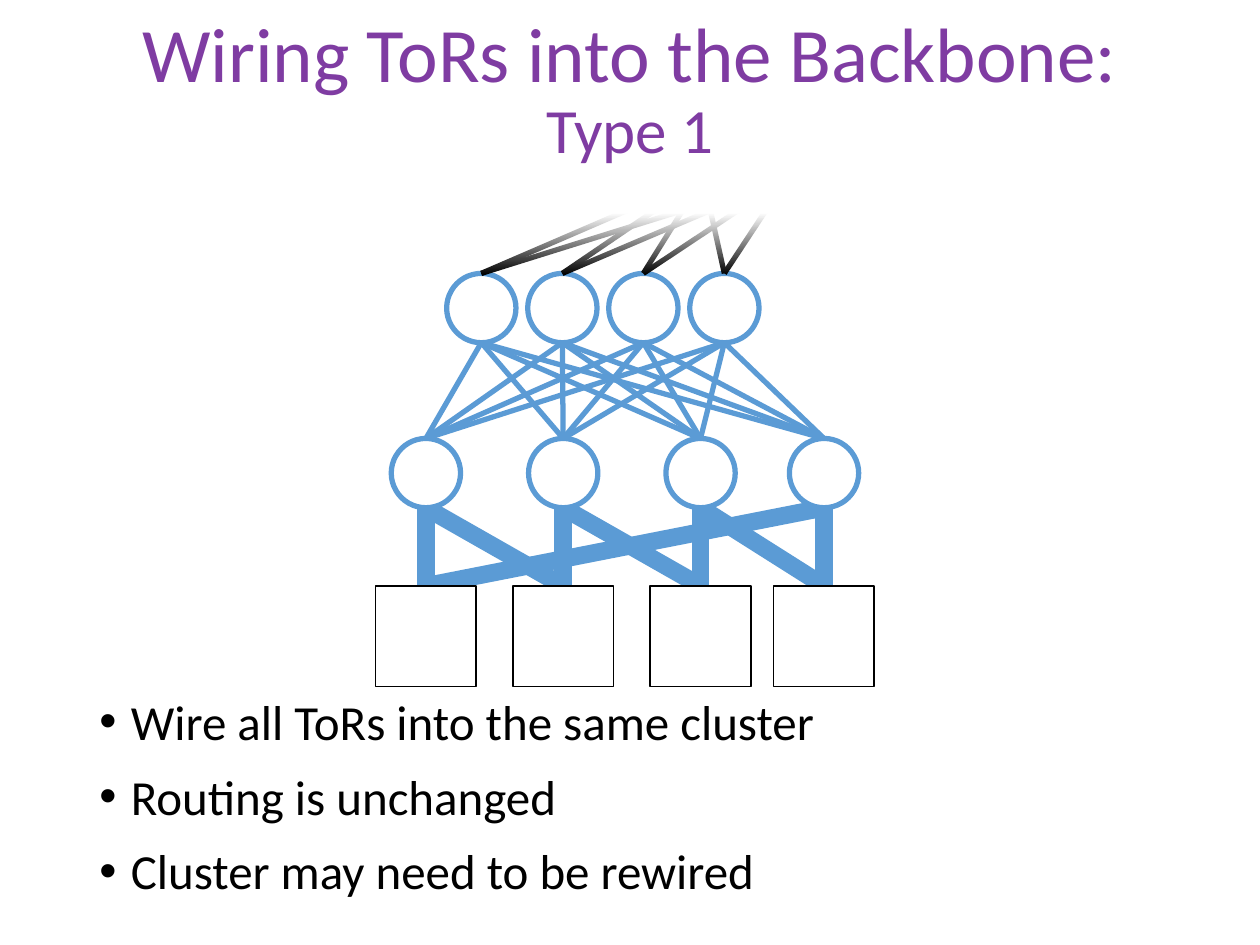
from pptx import Presentation
from pptx.dml.color import RGBColor
from pptx.enum.shapes import MSO_CONNECTOR, MSO_SHAPE
from pptx.enum.text import MSO_ANCHOR, PP_ALIGN
from pptx.oxml.ns import qn
from pptx.util import Inches, Pt
from lxml.etree import SubElement

BLUE, BLACK, WHITE, PURPLE = "5B9BD5", "000000", "FFFFFF", "7F3CA2"
TOR_X = [3.38, 4.47, 5.56, 6.54]
SPINE_X = [3.82 + 0.643 * i for i in range(4)]
CORE_X = [5.58, 6.25]
CORE_BOTTOM, SPINE_TOP, AGG_TOP, TOR_TOP = 1.41, 2.17, 3.48, 4.65
DIAMETER, TOR_SIZE = 0.55, 0.8
SPINE_BOTTOM, AGG_BOTTOM = SPINE_TOP + DIAMETER, AGG_TOP + DIAMETER

prs = Presentation()
prs.slide_width, prs.slide_height = Inches(10), Inches(7.5)
s = prs.slides.add_slide(prs.slide_layouts[5])
rgb = RGBColor.from_string


def add_link(x1, y1, x2, y2, color, width):
    link = s.shapes.add_connector(MSO_CONNECTOR.STRAIGHT, Inches(x1), Inches(y1), Inches(x2), Inches(y2))
    link.line.color.rgb = rgb(color)
    link.line.width = Pt(width)
    SubElement(link._element.spPr, qn("a:effectLst"))
    return link


def add_node(kind, center_x, top, size, color, width):
    node = s.shapes.add_shape(kind, Inches(center_x - size / 2), Inches(top), Inches(size), Inches(size))
    node.shadow.inherit = False
    node.fill.solid()
    node.fill.fore_color.rgb = rgb(WHITE)
    node.line.color.rgb = rgb(color)
    node.line.width = Pt(width)
    return node


# Links lie behind the nodes and are joined to them further down
agg_links, tor_links = [], []
for i, x in enumerate(TOR_X):
    for spine_x in SPINE_X:
        agg_links.append((i, add_link(x, AGG_TOP, spine_x, SPINE_BOTTOM, BLUE, 3)))
    for agg_x in (TOR_X[i], TOR_X[i - 1]):
        tor_links.append((i, add_link(x, TOR_TOP, agg_x, AGG_BOTTOM, BLUE, 10)))

tors = [add_node(MSO_SHAPE.RECTANGLE, x, TOR_TOP, TOR_SIZE, BLACK, 1) for x in TOR_X]
aggs = [add_node(MSO_SHAPE.OVAL, x, AGG_TOP, DIAMETER, BLUE, 3) for x in TOR_X]
spines = [add_node(MSO_SHAPE.OVAL, x, SPINE_TOP, DIAMETER, BLUE, 3) for x in SPINE_X]

for links, nodes in ((agg_links, aggs), (tor_links, tors)):
    for i, link in links:
        link.begin_connect(nodes[i], 0)

for spine, x in zip(spines, SPINE_X):
    for core_x in CORE_X:
        add_link(x, SPINE_TOP, core_x, CORE_BOTTOM, BLACK, 3).begin_connect(spine, 0)

# White fade over the upper links
fade = s.shapes.add_shape(MSO_SHAPE.RECTANGLE, Inches(0.24), Inches(0.44), Inches(8.83), Inches(1.73))
fade.shadow.inherit = False
fade.line.fill.background()
fade.fill.gradient()
fade.fill.gradient_angle = 90
for stop, position in zip(fade.fill.gradient_stops, (0, 0.28)):
    stop.color.rgb = rgb(WHITE)
    stop.position = position
first_color = next(fade._element.spPr.iter(qn("a:srgbClr")))
SubElement(first_color, qn("a:alpha"), val="0")

# Title, in front of the fade
title = s.shapes.title
title.left, title.top, title.width, title.height = Inches(0.69), Inches(0), Inches(8.62), Inches(1.45)
s.shapes._spTree.append(title._element)
tf = title.text_frame
tf.vertical_anchor = MSO_ANCHOR.MIDDLE
p = tf.paragraphs[0]
p.alignment = PP_ALIGN.CENTER
p.line_spacing = 0.9
for text, size in (("Wiring ToRs into the Backbone:", 44), ("Type 1", 36)):
    if p.runs:
        p.add_line_break()
    r = p.add_run()
    r.text = text
    r.font.name, r.font.size = "Calibri", Pt(size)
    r.font.color.rgb = rgb(PURPLE)

# Bullets
tf = s.shapes.add_textbox(Inches(0.69), Inches(5.41), Inches(8.62), Inches(1.56)).text_frame
tf.word_wrap = True
tf.margin_top = Inches(0.08)
bullets = ["Wire all ToRs into the same cluster", "Routing is unchanged", "Cluster may need to be rewired"]
for i, text in enumerate(bullets):
    p = tf.add_paragraph() if i else tf.paragraphs[0]
    pPr = p._p.get_or_add_pPr()
    pPr.set("marL", str(Inches(0.25)))
    pPr.set("indent", str(-Inches(0.25)))
    SubElement(pPr, qn("a:buFont"), typeface="Arial")
    SubElement(pPr, qn("a:buChar"), char="•")
    if i:
        p.space_before = Pt(9)
    r = p.add_run()
    r.text = text
    r.font.name, r.font.size = "Calibri", Pt(28)
    r.font.color.rgb = rgb(BLACK)

prs.save("out.pptx")
